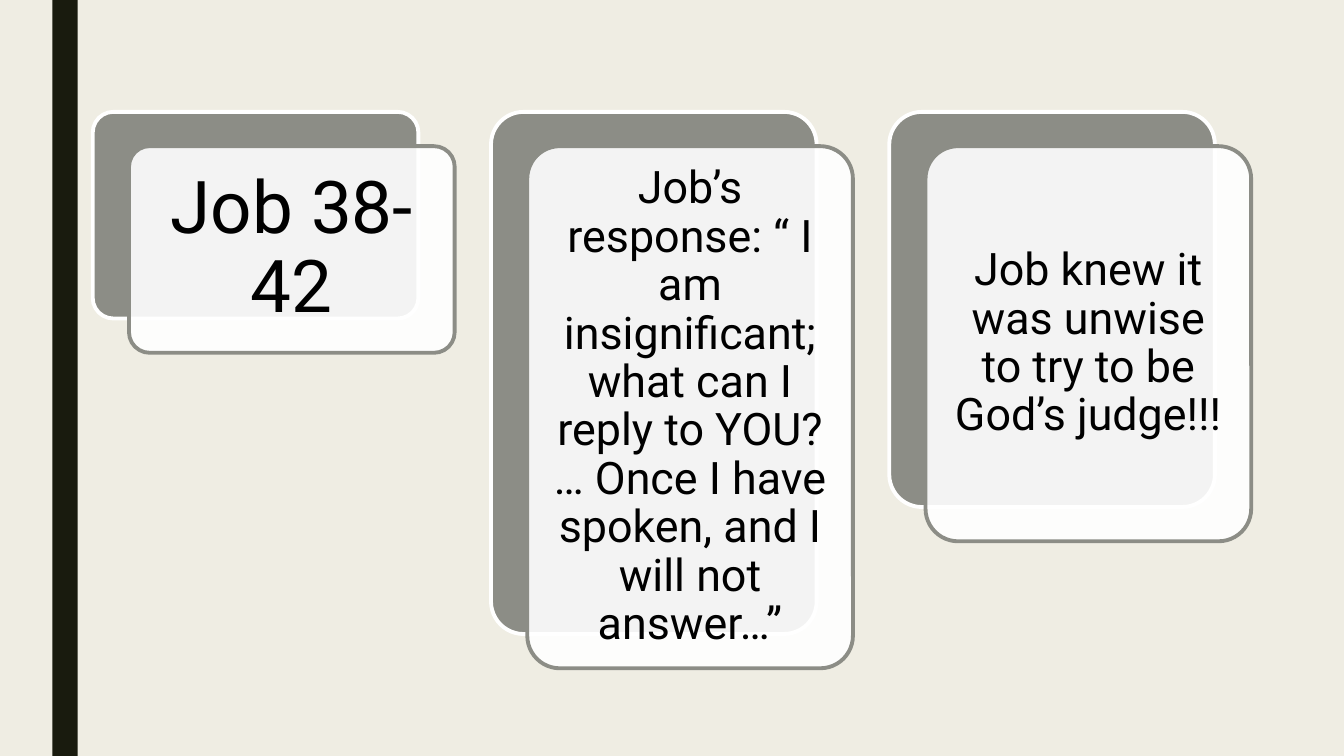
from lxml import etree
from pptx import Presentation
from pptx.dml.color import RGBColor
from pptx.enum.shapes import MSO_SHAPE
from pptx.enum.text import MSO_ANCHOR, PP_ALIGN
from pptx.oxml.ns import qn
from pptx.util import Pt

RECT, ROUNDED = MSO_SHAPE.RECTANGLE, MSO_SHAPE.ROUNDED_RECTANGLE
MIDDLE, CENTER = MSO_ANCHOR.MIDDLE, PP_ALIGN.CENTER

PX = 9144
INK, PAPER, GRAY, WHITE, BLACK = "191B0E", "EFEDE3", "8C8D86", "FFFFFF", "000000"

CARDS = [
    ("Job 38-42", 205, 52, 22),
    ("Job’s response: “ I am insignificant; what can I reply to YOU? "
     "… Once I have spoken, and I will not answer…”", 518, 32, 13),
    ("Job knew it was unwise to try to be God’s judge!!!", 392, 32, 13),
]
LEFT, TOP, CARD_W, PITCH = 92, 111, 323, 395
SHIFT_X, SHIFT_Y = 36, 34


def rgb(color):
    return RGBColor.from_string(color)


def add_box(slide, kind, x, y, w, h, fill, line=None):
    s = slide.shapes.add_shape(kind, x * PX, y * PX, w * PX, h * PX)
    s.shadow.inherit = False
    s.fill.solid()
    s.fill.fore_color.rgb = rgb(fill)
    if line:
        s.line.color.rgb = rgb(line)
        s.line.width = Pt(2.75)
        s.adjustments[0] = 0.1
    else:
        s.line.fill.background()
    return s


def set_alpha(s, percent):
    color = s.fill._xPr.find(qn("a:solidFill"))[0]
    etree.SubElement(color, qn("a:alpha")).set("val", str(percent * 1000))


def set_text(s, text, size, inset):
    tf = s.text_frame
    tf.word_wrap = True
    tf.vertical_anchor = MIDDLE
    tf.margin_left = tf.margin_right = tf.margin_top = tf.margin_bottom = inset * PX
    p = tf.paragraphs[0]
    p.text = text
    p.alignment = CENTER
    p.line_spacing = 0.9
    p.font.name = "Roboto"
    p.font.size = Pt(size)
    p.font.color.rgb = rgb(BLACK)


def main():
    prs = Presentation()
    prs.slide_width, prs.slide_height = 1333 * PX, 750 * PX
    slide = prs.slides.add_slide(prs.slide_layouts[6])
    slide.background.fill.solid()
    slide.background.fill.fore_color.rgb = rgb(PAPER)
    add_box(slide, RECT, 52, 0, 25, 750, INK)

    for i, (text, height, size, inset) in enumerate(CARDS):
        x = LEFT + i * PITCH
        add_box(slide, ROUNDED, x, TOP, CARD_W, height, GRAY, WHITE)
        front = add_box(slide, ROUNDED, x + SHIFT_X, TOP + SHIFT_Y,
                        CARD_W, height, WHITE, GRAY)
        set_alpha(front, 90)
        set_text(front, text, size, inset)

    prs.save("out.pptx")


if __name__ == "__main__":
    main()
